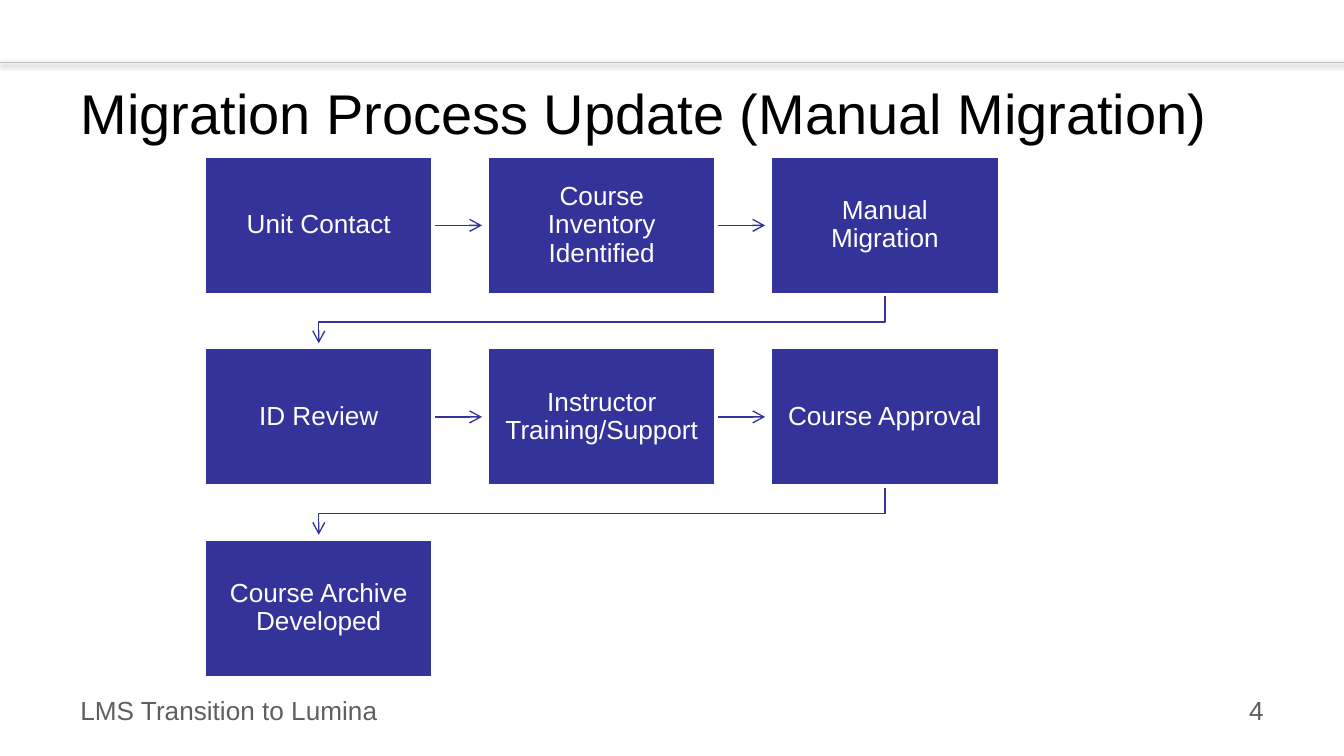
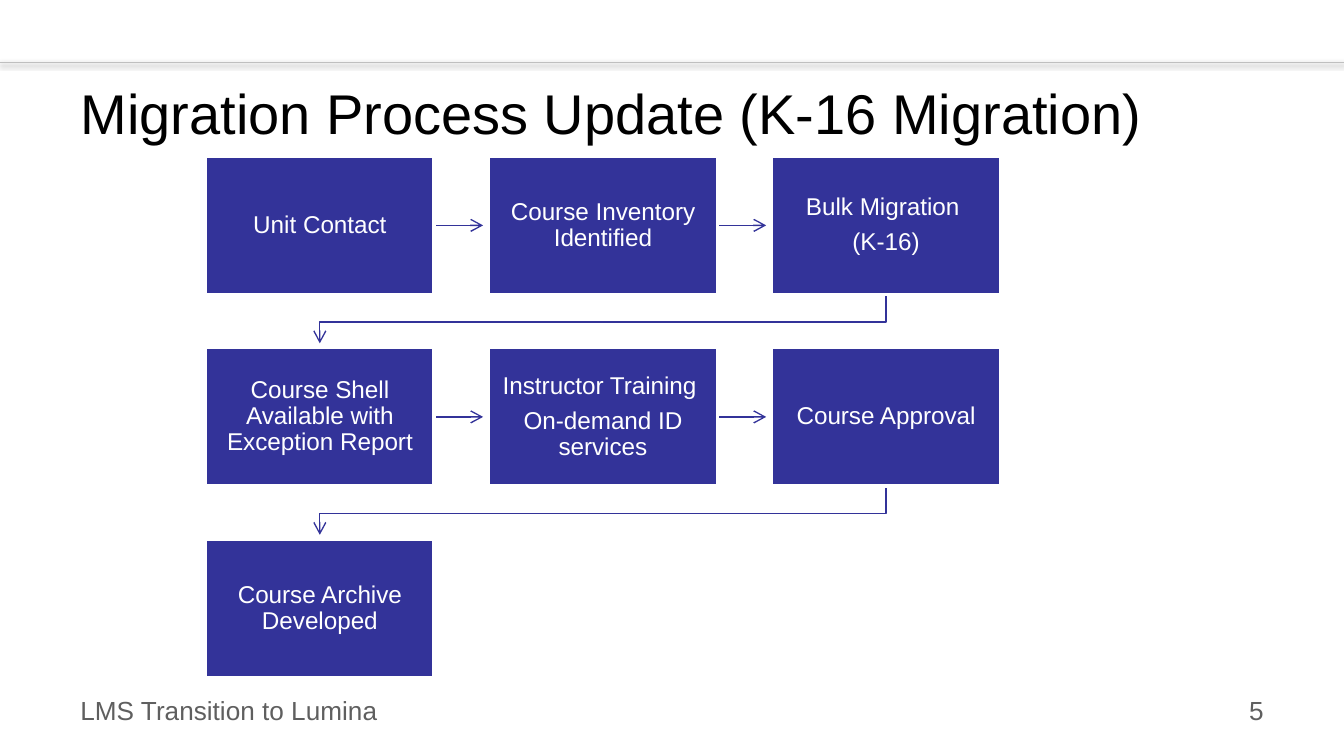
from dataclasses import dataclass

from lxml import etree
from pptx import Presentation, util as u
from pptx.dml.color import RGBColor
from pptx.enum import shapes, text
from pptx.oxml import ns


@dataclass(frozen=True)
class Theme:
    """Colours, font and type sizes of the deck."""
    font: str = "Arial"
    blue: str = "333399"
    white: str = "FFFFFF"
    black: str = "000000"
    grey: str = "5F5F5F"
    rule: str = "BFBFBF"
    title: float = 30
    foot: float = 14


@dataclass(frozen=True)
class Grid:
    """Box size and pitch of the flow, in centimetres."""
    wide: float = 4.33
    high: float = 2.62
    col: float = 5.35
    row: float = 3.62
    cols: int = 3
    reach: float = 0.92
    drop: float = 0.52


THEME = Theme()
GRID = Grid()
FOOT = "LMS Transition to Lumina"
FLOWS = [
    ("Migration Process Update (Manual Migration)", 4, 14, 3.86, 0.28, [
        ["Unit Contact"],
        ["Course Inventory Identified"],
        ["Manual Migration"],
        ["ID Review"],
        ["Instructor Training/Support"],
        ["Course Approval"],
        ["Course Archive Developed"],
    ]),
    ("Migration Process Update (K-16 Migration)", 5, 13, 3.88, 0.26, [
        ["Unit Contact"],
        ["Course Inventory Identified"],
        ["Bulk Migration ", "(K-16)"],
        ["Course Shell Available with Exception Report"],
        ["Instructor Training ", "On-demand ID services"],
        ["Course Approval"],
        ["Course Archive Developed"],
    ]),
]


def tint(code):
    """Turn a hex code into a colour."""
    return RGBColor.from_string(code)


def node(parent, tag, **attrs):
    """Append a DrawingML element and return it."""
    return etree.SubElement(parent, ns.qn(tag), attrs)


def write(para, words, size, code, align=text.PP_ALIGN.LEFT):
    """Add one styled run to a paragraph."""
    para.alignment = align
    run = para.add_run()
    run.text = words
    run.font.name = THEME.font
    run.font.size = u.Pt(size)
    run.font.color.rgb = tint(code)


def stroke(line, code, width):
    """Colour a line and set its width in points."""
    line.color.rgb = tint(code)
    line.width = u.Pt(width)


def arrow(shape):
    """Style a flow line with an open arrowhead."""
    stroke(shape.line, THEME.blue, 0.75)
    node(shape.line._get_or_add_ln(), "a:tailEnd", type="arrow")


def link(slide, x1, y1, x2, y2):
    """Add a straight connector and return it."""
    return slide.shapes.add_connector(
        shapes.MSO_CONNECTOR.STRAIGHT, u.Cm(x1), u.Cm(y1), u.Cm(x2), u.Cm(y2))


def band(slide):
    """Draw the shaded rule across the top."""
    rule = link(slide, 0, 1.17, 25.4, 1.17)
    stroke(rule.line, THEME.rule, 0.25)
    fx = node(rule._element.spPr, "a:effectLst")
    shade = node(fx, "a:outerShdw", blurRad=str(u.Pt(3.1)), dist=str(u.Pt(1.6)),
                 dir="5400000", algn="t", rotWithShape="0")
    node(node(shade, "a:srgbClr", val=THEME.black), "a:alpha", val="38000")


def head(slide, words):
    """Place and fill the title."""
    title = slide.shapes.title
    title.left, title.top = u.Cm(1.27), u.Cm(1.27)
    title.width, title.height = u.Cm(22.86), u.Cm(1.68)
    frame = title.text_frame
    frame.auto_size = text.MSO_AUTO_SIZE.NONE
    frame.vertical_anchor = text.MSO_ANCHOR.MIDDLE
    write(frame.paragraphs[0], words, THEME.title, THEME.black)


def foot(slide, num):
    """Write the footer and the slide number."""
    for left, wide, words, align in (
            (1.27, 8, FOOT, text.PP_ALIGN.LEFT),
            (18.21, 5.92, str(num), text.PP_ALIGN.RIGHT)):
        box = slide.shapes.add_textbox(u.Cm(left), u.Cm(13), u.Cm(wide), u.Cm(0.9))
        box.text_frame.word_wrap = True
        write(box.text_frame.paragraphs[0], words, THEME.foot, THEME.grey, align)


def step(slide, left, top, lines, size, pad):
    """Draw one step box with its text."""
    box = slide.shapes.add_shape(
        shapes.MSO_SHAPE.RECTANGLE,
        u.Cm(left), u.Cm(top), u.Cm(GRID.wide), u.Cm(GRID.high))
    box.shadow.inherit = False
    box.fill.solid()
    box.fill.fore_color.rgb = tint(THEME.blue)
    stroke(box.line, THEME.white, 2)
    frame = box.text_frame
    frame.word_wrap = True
    frame.vertical_anchor = text.MSO_ANCHOR.MIDDLE
    frame.margin_left = frame.margin_right = u.Cm(pad)
    frame.margin_top = frame.margin_bottom = u.Cm(pad)
    for i, words in enumerate(lines):
        para = frame.add_paragraph() if i else frame.paragraphs[0]
        para.line_spacing = 0.9
        para.space_after = u.Pt(size * 0.35)
        write(para, words, size, THEME.white, text.PP_ALIGN.CENTER)


def across(slide, left, top):
    """Lead from the box at left, top to the next in its row."""
    x, y = left + GRID.wide, top + GRID.high / 2
    line = link(slide, x, y, x + GRID.reach, y)
    arrow(line)
    node(line._element.spPr, "a:effectLst")


def wrap(slide, left, top):
    """Lead from the last box of a row to the first of the next."""
    x, y = left + GRID.wide / 2, top + GRID.high
    back = x - (GRID.cols - 1) * GRID.col
    turn = y + GRID.drop
    pen = slide.shapes.build_freeform(u.Cm(x), u.Cm(y))
    pen.add_line_segments(
        [(u.Cm(a), u.Cm(b)) for a, b in
         ((x, turn), (back, turn), (back, y + GRID.reach))], close=False)
    line = pen.convert_to_shape()
    line.shadow.inherit = False
    line.fill.background()
    arrow(line)


def flow(slide, left, top, steps, size, pad):
    """Lay the steps out row by row and join them."""
    for i, lines in enumerate(steps):
        row, col = divmod(i, GRID.cols)
        x, y = left + col * GRID.col, top + row * GRID.row
        if i < len(steps) - 1:
            join = across if col < GRID.cols - 1 else wrap
            join(slide, x, y)
        step(slide, x, y, lines, size, pad)


def main():
    """Build the deck."""
    deck = Presentation()
    deck.slide_width, deck.slide_height = u.Cm(25.4), u.Cm(14.29)
    for title, num, size, left, pad, steps in FLOWS:
        slide = deck.slides.add_slide(deck.slide_layouts[5])
        band(slide)
        head(slide, title)
        foot(slide, num)
        flow(slide, left, 2.95, steps, size, pad)
    deck.save("out.pptx")


if __name__ == "__main__":
    main()
